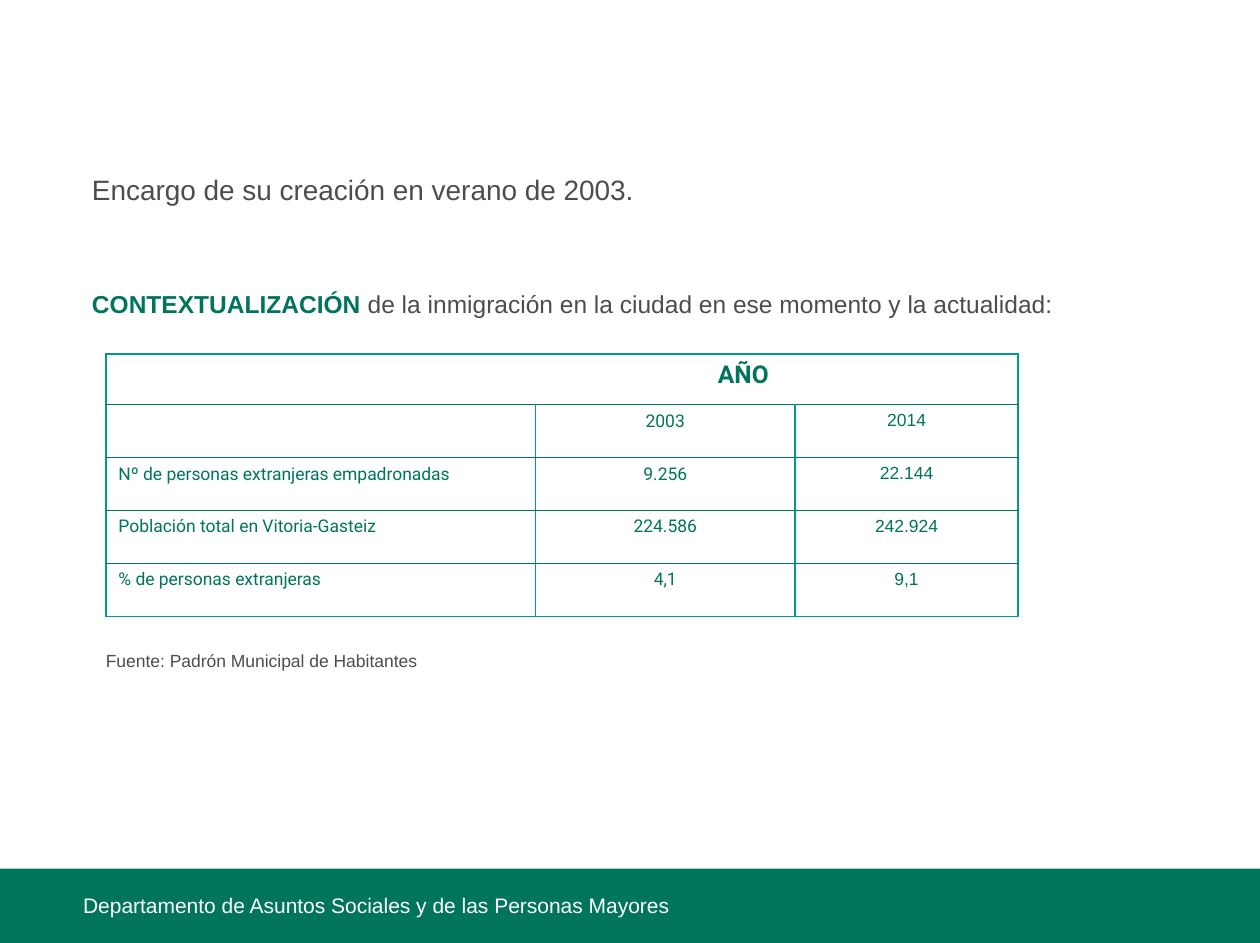
import dataclasses

import lxml.etree
import pptx
import pptx.dml.color
import pptx.enum.shapes
import pptx.enum.text
import pptx.oxml
import pptx.oxml.ns
import pptx.util

Inches = pptx.util.Inches
Pt = pptx.util.Pt
RGBColor = pptx.dml.color.RGBColor
ALIGN = pptx.enum.text.PP_ALIGN

GREEN = RGBColor(0x00, 0x75, 0x5C)
TEAL = RGBColor(0x00, 0x99, 0x99)
GREY = RGBColor(0x4D, 0x4D, 0x4D)
WHITE = RGBColor(0xFF, 0xFF, 0xFF)

COLUMN_WIDTHS = (3.41, 2.06, 1.77)
COLUMN_FONTS = ("Roboto", "Roboto", "Arial")
HEADER_HEIGHT = 0.4
ROW_HEIGHT = 0.42
YEAR_INDENT = 2.88
ROWS = (
    ("AÑO", "", ""),
    ("", "2003", "2014"),
    ("Nº de personas extranjeras empadronadas", "9.256", "22.144"),
    ("Población total en Vitoria-Gasteiz", "224.586", "242.924"),
    ("% de personas extranjeras", "4,1", "9,1"),
)


@dataclasses.dataclass(frozen=True)
class Span:
    text: str
    size: float
    color: RGBColor
    bold: bool = False
    font: str = "Arial"


@dataclasses.dataclass(frozen=True)
class Caption:
    span: Span
    left: float
    top: float
    width: float
    height: float


CAPTIONS = (
    Caption(
        Span("Departamento de Asuntos Sociales y de las Personas Mayores", 12, WHITE),
        0.66, 7.08, 7.3, 0.24,
    ),
    Caption(Span("Fuente: Padrón Municipal de Habitantes", 10, GREY), 0.84, 5.16, 7.26, 0.17),
)

BODY = (
    (Span("Encargo de su creación en verano de 2003.", 16, GREY),),
    (
        Span("CONTEXTUALIZACIÓN ", 14, GREEN, True),
        Span("de la inmigración en la ciudad en ese momento y la actualidad:", 14, GREY),
    ),
)


def apply_format(target, values: dict) -> None:
    for name, value in values.items():
        setattr(target, name, value)


def format_font(font, span: Span) -> None:
    apply_format(font, {"name": span.font, "size": Pt(span.size), "bold": span.bold})
    font.color.rgb = span.color


def add_span(para, span: Span) -> None:
    run = para.add_run()
    run.text = span.text
    format_font(run.font, span)


def set_indent(para, left: float):
    properties = para._p.get_or_add_pPr()
    properties.set("marL", str(Inches(left)))
    properties.set("indent", "0")
    return properties


def add_band(page) -> None:
    band = page.shapes.add_shape(
        pptx.enum.shapes.MSO_SHAPE.RECTANGLE,
        Inches(-0.02), Inches(6.89), Inches(10.02), Inches(0.59),
    )
    band.shadow.inherit = False
    band.fill.solid()
    band.fill.fore_color.rgb = GREEN
    band.line.fill.background()


def add_caption(page, caption: Caption) -> None:
    box = page.shapes.add_textbox(
        Inches(caption.left), Inches(caption.top), Inches(caption.width), Inches(caption.height)
    )
    margins = dict.fromkeys(("margin_left", "margin_top", "margin_right", "margin_bottom"), 0)
    apply_format(box.text_frame, {"word_wrap": True, **margins})
    add_span(box.text_frame.paragraphs[0], caption.span)


def fill_body(body) -> None:
    apply_format(body, {
        "left": Inches(0.63), "top": Inches(1.32), "width": Inches(8.8), "height": Inches(4.95),
    })
    frame = body.text_frame
    apply_format(frame, {
        "auto_size": pptx.enum.text.MSO_AUTO_SIZE.NONE,
        "vertical_anchor": pptx.enum.text.MSO_ANCHOR.TOP,
    })
    for index, spans in enumerate(BODY):
        para = frame.add_paragraph() if index else frame.paragraphs[0]
        properties = set_indent(para, 0)
        lxml.etree.SubElement(properties, pptx.oxml.ns.qn("a:buNone"))
        para.space_before = Pt(47.3 if index else 0)
        for span in spans:
            add_span(para, span)


def set_borders(cell, colors: dict[str, RGBColor]) -> None:
    properties = cell._tc.get_or_add_tcPr()
    for side, color in colors.items():
        properties.append(pptx.oxml.parse_xml(
            f'<a:ln{side} {pptx.oxml.ns.nsdecls("a")} w="{Pt(1)}"><a:solidFill>'
            f'<a:srgbClr val="{color}"/></a:solidFill></a:ln{side}>'
        ))


def add_population_table(page) -> None:
    height = HEADER_HEIGHT + ROW_HEIGHT * (len(ROWS) - 1)
    frame = page.shapes.add_table(
        len(ROWS), len(COLUMN_WIDTHS),
        Inches(0.84), Inches(2.81), Inches(sum(COLUMN_WIDTHS)), Inches(height),
    )
    table = frame.table
    apply_format(table, {"first_row": False, "horz_banding": False})
    for column, width in zip(table.columns, COLUMN_WIDTHS):
        column.width = Inches(width)
    for index, row in enumerate(table.rows):
        row.height = Inches(ROW_HEIGHT if index else HEADER_HEIGHT)
    table.cell(0, 0).merge(table.cell(0, len(COLUMN_WIDTHS) - 1))

    for row, values in enumerate(ROWS):
        for column, text in enumerate(values):
            cell = table.cell(row, column)
            if cell.is_spanned:
                continue
            header = row == 0
            set_borders(cell, {
                "L": TEAL,
                "R": TEAL,
                "T": TEAL if header else GREEN,
                "B": TEAL if row == len(ROWS) - 1 else GREEN,
            })
            cell.fill.background()
            para = cell.text_frame.paragraphs[0]
            para.alignment = ALIGN.CENTER if header or column else ALIGN.JUSTIFY
            span = Span(text, 14 if header else 10, GREEN, header, COLUMN_FONTS[column])
            if text:
                add_span(para, span)
            else:
                format_font(para.font, span)
    set_indent(table.cell(0, 0).text_frame.paragraphs[0], YEAR_INDENT)


def main() -> None:
    deck = pptx.Presentation()
    apply_format(deck, {"slide_width": Inches(10), "slide_height": pptx.util.Cm(19)})
    page = deck.slides.add_slide(deck.slide_layouts[1])
    title = page.shapes.title
    title.element.getparent().remove(title.element)
    add_band(page)
    fill_body(page.placeholders[1])
    add_population_table(page)
    for caption in CAPTIONS:
        add_caption(page, caption)
    deck.save("out.pptx")


if __name__ == "__main__":
    main()
